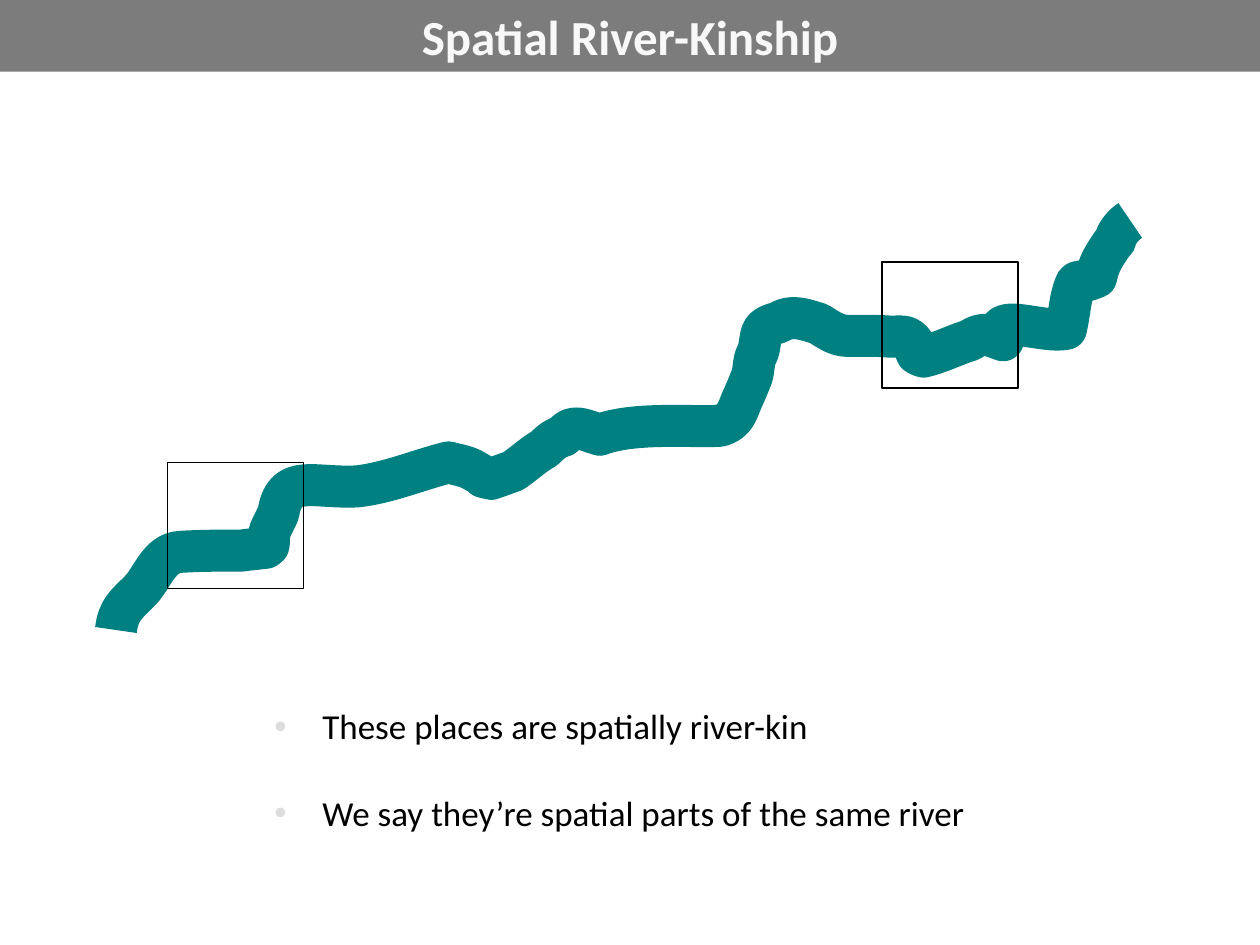
from lxml import etree
from pptx import Presentation
from pptx.dml.color import RGBColor
from pptx.enum.shapes import MSO_SHAPE
from pptx.enum.text import MSO_ANCHOR, PP_ALIGN
from pptx.oxml.ns import qn
from pptx.util import Pt

PX = 9144  # EMU per px, 100 px to the inch
RECT = MSO_SHAPE.RECTANGLE
CENTER = PP_ALIGN.CENTER
MIDDLE = MSO_ANCHOR.MIDDLE

GREY = RGBColor(0x7C, 0x7C, 0x7C)
PALE = RGBColor(0xF8, 0xF8, 0xF8)
SILVER = RGBColor(0xDD, 0xDD, 0xDD)
BLACK = RGBColor(0, 0, 0)
TEAL = RGBColor(0, 0x80, 0x80)

TITLE_FONT = {"name": "Calibri", "size": Pt(28), "bold": True}
BODY_FONT = {"name": "Calibri", "size": Pt(20), "bold": False}
BODY_PARA = {"line_spacing": 0.9, "space_before": Pt(4), "space_after": Pt(24)}

RIVER_BOX = (92, 175, 806, 325)
START = (0, 325)
# Each row is one Bézier curve: two control points and the end point
CURVES = [
    (2, 309, 8, 305, 19, 294), (29, 284, 34, 264, 51, 263),
    (67, 262, 84, 262, 100, 262), (105, 261, 110, 261, 116, 260),
    (118, 260, 120, 260, 121, 258), (122, 255, 121, 251, 122, 247),
    (124, 242, 127, 237, 129, 232), (134, 200, 157, 213, 192, 211),
    (217, 208, 240, 198, 264, 192), (271, 194, 279, 195, 285, 199),
    (298, 206, 285, 202, 298, 205), (304, 203, 309, 201, 315, 199),
    (324, 193, 331, 186, 340, 181), (345, 176, 348, 173, 355, 171),
    (362, 160, 373, 167, 384, 170), (411, 160, 453, 164, 479, 163),
    (491, 160, 493, 152, 497, 142), (500, 136, 505, 123, 505, 123),
    (506, 119, 506, 115, 507, 111), (507, 109, 509, 106, 510, 103),
    (513, 89, 510, 85, 526, 81), (536, 74, 548, 79, 558, 82),
    (579, 96, 576, 90, 612, 92), (618, 93, 626, 90, 631, 95),
    (638, 102, 630, 105, 641, 108), (654, 105, 665, 99, 678, 95),
    (688, 88, 693, 91, 704, 95), (692, 71, 735, 90, 754, 86),
    (757, 74, 757, 61, 762, 50), (763, 48, 766, 49, 768, 48),
    (771, 48, 775, 46, 778, 45), (780, 35, 783, 30, 789, 21),
    (790, 19, 793, 16, 793, 16), (794, 10, 800, 3, 805, 0),
]
PLACES = [(133, 367, 108, 100), (700, 208, 108, 100)]
POINTS = [
    "These places are spatially river-kin",
    "We say they’re spatial parts of the same river",
]


def emu(box):
    return [n * PX for n in box]


def style(thing, look):
    for key, value in look.items():
        setattr(thing, key, value)


def write(para, text, look, color):
    run = para.add_run()
    run.text = text
    style(run.font, look)
    run.font.color.rgb = color


def outline(shape, color, width):
    shape.shadow.inherit = False
    shape.fill.background()
    shape.line.color.rgb = color
    shape.line.width = Pt(width)


def add_title(slide, box, text):
    bar = slide.shapes.add_shape(RECT, *emu(box))
    bar.shadow.inherit = False
    bar.fill.solid()
    bar.fill.fore_color.rgb = GREY
    bar.line.fill.background()
    bar.text_frame.vertical_anchor = MIDDLE
    para = bar.text_frame.paragraphs[0]
    para.alignment = CENTER
    write(para, text, TITLE_FONT, PALE)


def add_bullet(para):
    props = para._p.get_or_add_pPr()
    props.set("marL", str(38 * PX))
    props.set("indent", str(-38 * PX))
    tint = etree.SubElement(props, qn("a:buClr"))
    etree.SubElement(tint, qn("a:srgbClr")).set("val", str(SILVER))
    etree.SubElement(props, qn("a:buFont")).set("typeface", "Arial")
    etree.SubElement(props, qn("a:buChar")).set("char", "•")


def add_body(slide, box, lines):
    frame = slide.shapes.add_textbox(*emu(box)).text_frame
    frame.word_wrap = True
    for i, text in enumerate(lines):
        para = frame.add_paragraph() if i else frame.paragraphs[0]
        style(para, BODY_PARA)
        add_bullet(para)
        write(para, text, BODY_FONT, BLACK)


def add_river(slide, box):
    """Draw the river, turning each three straight steps into one curve."""
    left, top = box[:2]
    dots = [(left + c[i], top + c[i + 1]) for c in CURVES for i in (0, 2, 4)]
    pen = slide.shapes.build_freeform(left + START[0], top + START[1], scale=PX)
    pen.add_line_segments(dots, close=False)
    river = pen.convert_to_shape()
    steps = river._element.xpath(".//a:lnTo")
    for i in range(0, len(steps), 3):
        curve = etree.Element(qn("a:cubicBezTo"))
        steps[i].addprevious(curve)
        for step in steps[i:i + 3]:
            curve.append(step[0])
            step.getparent().remove(step)
    outline(river, TEAL, 24)


def add_place(slide, box):
    outline(slide.shapes.add_shape(RECT, *emu(box)), BLACK, 0.75)


def main():
    deck = Presentation()
    deck.slide_width, deck.slide_height = emu((1000, 750))
    slide = deck.slides.add_slide(deck.slide_layouts[6])
    add_title(slide, (0, 0, 1000, 57), "Spatial River-Kinship")
    add_body(slide, (208, 558, 625, 117), POINTS)
    add_river(slide, RIVER_BOX)
    for box in PLACES:
        add_place(slide, box)
    deck.save("out.pptx")


if __name__ == "__main__":
    main()
